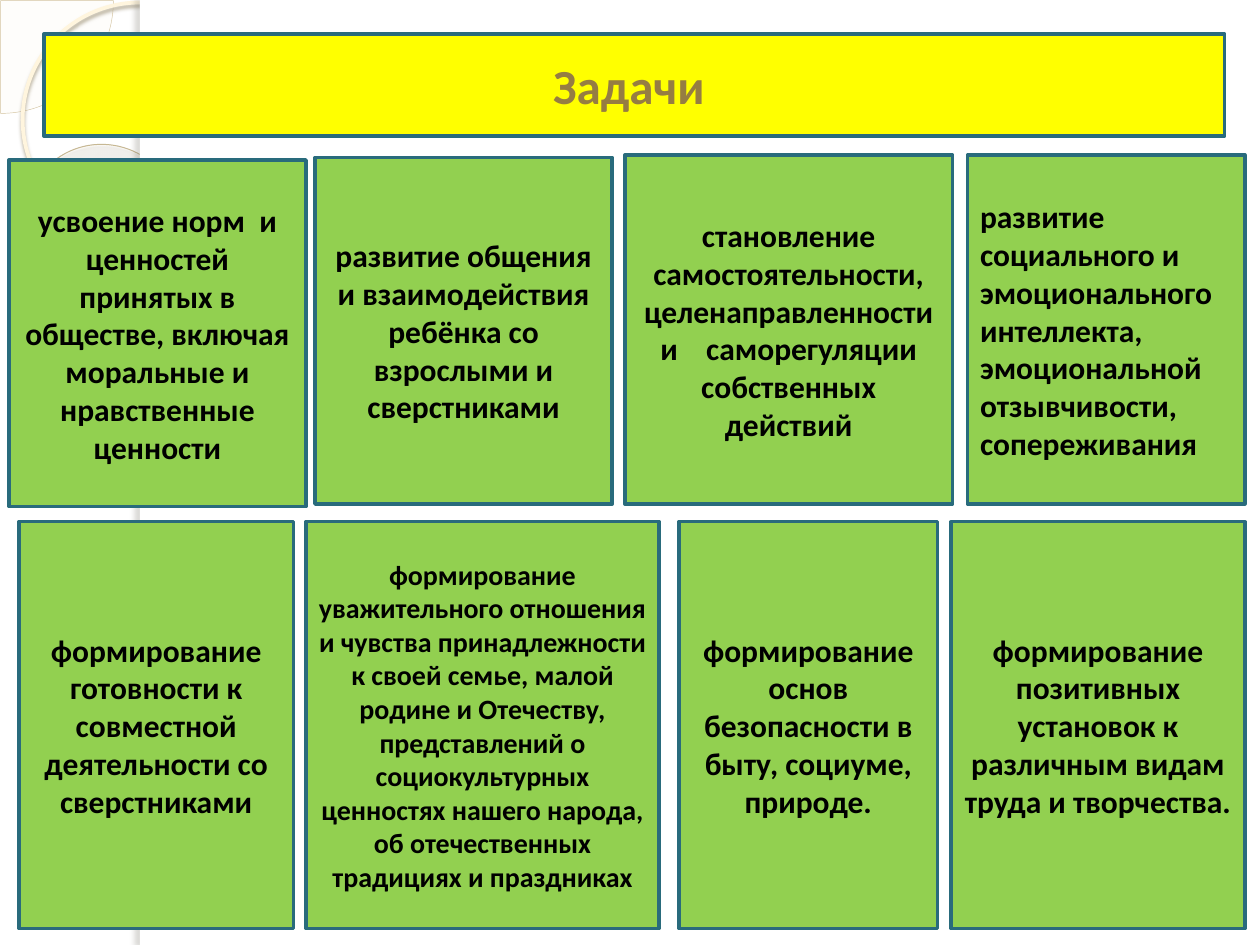
from dataclasses import dataclass

from pptx import Presentation
from pptx.dml.color import RGBColor
from pptx.enum.shapes import MSO_SHAPE as SHAPE
from pptx.enum.text import MSO_ANCHOR as ANCHOR, MSO_AUTO_SIZE as AUTO, PP_ALIGN as ALIGN
from pptx.oxml import parse_xml
from pptx.oxml.ns import nsdecls, qn
from pptx.util import Inches, Pt


@dataclass(frozen=True)
class Theme:
    font: str = "Calibri"
    title_size: int = 28
    task_size: int = 18
    small_size: int = 16
    title_color: str = "967D42"
    title_fill: str = "FFFF00"
    task_color: str = "000000"
    task_fill: str = "92D050"
    border: str = "296B7C"
    border_width: float = 2
    paper: str = "FFFFFF"
    pie_fill: str = "FEFAF4"
    pie_line: str = "D3C39F"
    ring_line: str = "FFF5DE"
    ring_shadow: str = "B0A68F"
    donut_line: str = "C7B893"
    donut_shadow: str = "5A5444"
    donut_stops: tuple = ((0, "FFFCF6", 70), (70, "FFFEFB", 55), (100, "F0D28E", 60))
    edge_shadow: str = "736F63"


THEME = Theme()

# Each task: left, width, text size, alignment, paragraphs
TOP_TASKS = [
    ((0.07, 1.27, 2.36, 2.75), THEME.task_size, ALIGN.CENTER,
     ["усвоение норм  и ценностей принятых в обществе, включая моральные и нравственные ценности"]),
    ((2.5, 1.25, 2.36, 2.75), THEME.task_size, ALIGN.CENTER,
     ["развитие общения и взаимодействия ребёнка со взрослыми и сверстниками"]),
    ((4.96, 1.23, 2.6, 2.77), THEME.task_size, ALIGN.CENTER,
     ["становление самостоятельности,",
      "целенаправленности и    саморегуляции собственных действий"]),
    ((7.68, 1.23, 2.2, 2.77), THEME.task_size, ALIGN.LEFT,
     ["развитие социального и эмоционального интеллекта, эмоциональной отзывчивости, "
      "сопереживания"]),
]
BOTTOM_TOP, BOTTOM_HEIGHT = 4.14, 3.23
BOTTOM_TASKS = [
    (0.15, 2.18, THEME.task_size,
     "формирование готовности к совместной деятельности со сверстниками"),
    (2.43, 2.8, THEME.small_size,
     "формирование уважительного отношения и чувства принадлежности к своей семье, "
     "малой родине и Отечеству, представлений о социокультурных ценностях нашего народа, "
     "об отечественных традициях и праздниках"),
    (5.39, 2.05, THEME.task_size,
     "формирование основ безопасности в быту, социуме, природе."),
    (7.55, 2.33, THEME.task_size,
     "формирование позитивных установок к различным видам труда и творчества."),
]


def rgb(color):
    return RGBColor.from_string(color)


def paint(sp, fill=None, line=None, width=1):
    if fill:
        sp.fill.solid()
        sp.fill.fore_color.rgb = rgb(fill)
    else:
        sp.fill.background()
    if line:
        sp.line.color.rgb = rgb(line)
        sp.line.width = Pt(width)
    else:
        sp.line.fill.background()


def add_box(slide, kind, box, **style):
    sp = slide.shapes.add_shape(kind, *map(Inches, box))
    sp.shadow.inherit = False
    paint(sp, **style)
    return sp


def add_shadow(sp, color, alpha, blur, dist, angle):
    effects = sp._element.spPr.find(qn("a:effectLst"))
    effects.append(parse_xml(
        f'<a:outerShdw {nsdecls("a")} blurRad="{Pt(blur)}" dist="{Pt(dist)}" '
        f'dir="{angle * 60000}" algn="tl" rotWithShape="0"><a:srgbClr val="{color}">'
        f'<a:alpha val="{alpha * 1000}"/></a:srgbClr></a:outerShdw>'))


def set_alpha(sp, percent):
    color = sp._element.spPr.find(qn("a:solidFill"))[0]
    color.append(parse_xml(f'<a:alpha {nsdecls("a")} val="{percent * 1000}"/>'))


def set_radial_fill(sp, stops):
    stop_xml = "".join(
        f'<a:gs pos="{pos * 1000}"><a:srgbClr val="{color}">'
        f'<a:alpha val="{alpha * 1000}"/></a:srgbClr></a:gs>'
        for pos, color, alpha in stops)
    sp_pr = sp._element.spPr
    sp_pr.replace(sp_pr.find(qn("a:solidFill")), parse_xml(
        f'<a:gradFill {nsdecls("a")}><a:gsLst>{stop_xml}</a:gsLst><a:path path="circle">'
        '<a:fillToRect l="-408000" t="-50000" r="508000" b="150000"/></a:path></a:gradFill>'))


def write(sp, paragraphs, size, color, align=ALIGN.CENTER):
    tf = sp.text_frame
    tf.word_wrap = True
    tf.auto_size = AUTO.NONE
    tf.vertical_anchor = ANCHOR.MIDDLE
    for i, text in enumerate(paragraphs):
        p = tf.add_paragraph() if i else tf.paragraphs[0]
        p.alignment = align
        r = p.add_run()
        r.text = text
        r.font.name = THEME.font
        r.font.size = Pt(size)
        r.font.bold = True
        r.font.color.rgb = rgb(color)


def add_side_ornament(slide, left, width, height):
    """Circles in the top left corner, partly covered by the white page."""
    pie = add_box(slide, SHAPE.PIE, (left - 0.89, -0.89, 1.79, 1.79),
                  fill=THEME.pie_fill, line=THEME.pie_line, width=0.25)
    pie.adjustments[0], pie.adjustments[1] = 0, 54.02
    set_alpha(pie, 33)

    ring = add_box(slide, SHAPE.OVAL, (left + 0.18, 0.02, 1.86, 1.86),
                   line=THEME.ring_line, width=2.15)
    add_shadow(ring, THEME.ring_shadow, 85, 2, 2, 90)

    donut = add_box(slide, SHAPE.DONUT, (left + 0.2, 1.15, 1.23, 1.21),
                    fill=THEME.paper, line=THEME.donut_line, width=0.58)
    donut.adjustments[0] = 0.12
    donut.rotation = 38.6
    set_radial_fill(donut, THEME.donut_stops)
    add_shadow(donut, THEME.donut_shadow, 35, 1, 1.2, 75)

    page_left = left + 1.11
    add_box(slide, SHAPE.RECTANGLE, (page_left, 0, width - page_left, height), fill=THEME.paper)
    edge = add_box(slide, SHAPE.RECTANGLE, (page_left, 0, 0.08, height), fill=THEME.paper)
    add_shadow(edge, THEME.edge_shadow, 25, 3, 3, 180)


def add_task(slide, box, size, align, paragraphs):
    sp = add_box(slide, SHAPE.RECTANGLE, box, fill=THEME.task_fill,
                 line=THEME.border, width=THEME.border_width)
    write(sp, paragraphs, size, THEME.task_color, align)


def place_title(slide, box, text):
    title = slide.shapes.title
    title.left, title.top, title.width, title.height = map(Inches, box)
    paint(title, THEME.title_fill, THEME.border, THEME.border_width)
    write(title, [text], THEME.title_size, THEME.title_color)
    slide.shapes._spTree.append(title._element)  # bring to front


def main():
    width, height = 10, 7.5
    prs = Presentation()
    prs.slide_width, prs.slide_height = Inches(width), Inches(height)
    slide = prs.slides.add_slide(prs.slide_layouts[5])

    add_side_ornament(slide, 0, width, height)
    for task in TOP_TASKS:
        add_task(slide, *task)
    for left, task_width, size, text in BOTTOM_TASKS:
        add_task(slide, (left, BOTTOM_TOP, task_width, BOTTOM_HEIGHT), size, ALIGN.CENTER, [text])
    place_title(slide, (0.35, 0.27, 9.37, 0.81), "Задачи ")

    prs.save("out.pptx")


if __name__ == "__main__":
    main()
